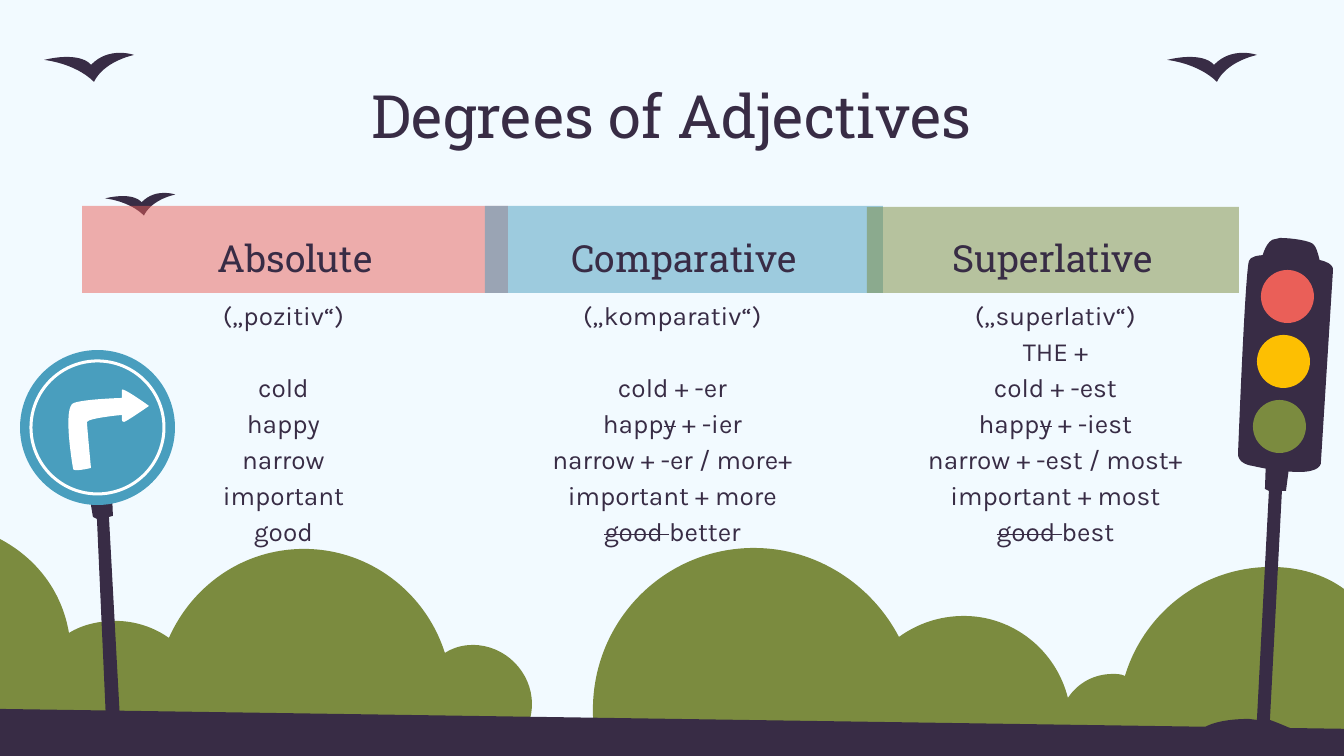
from lxml import etree
from pptx import Presentation
from pptx import util as u
from pptx.dml.color import RGBColor
from pptx.enum import shapes, text
from pptx.oxml.ns import qn

PX = 914400 / 134.4
SKY, DARK, GREEN, BLUE = "F2FAFF", "382C45", "7B8B3F", "499EBE"
RED, YELLOW, WHITE = "EA5F58", "FDBF02", "FFFFFF"

# Outlines: two numbers draw a line, six numbers draw a cubic curve.
BUSHES = [
    [(599, 756), (1344, 756), (1344, 589), (1325, 575, 1300, 567, 1271, 567),
     (1202, 567, 1144, 613, 1125, 676), (1121, 674, 1117, 674, 1113, 674),
     (1094, 674, 1078, 683, 1068, 698), (1056, 650, 1013, 616, 964, 616),
     (939, 616, 917, 624, 899, 637), (872, 585, 817, 548, 754, 548),
     (665, 548, 593, 620, 593, 710), (593, 726, 595, 741, 599, 756)],
    [(0, 539), (0, 756), (501, 756), (519, 746, 532, 727, 532, 704),
     (532, 672, 505, 645, 473, 645), (462, 645, 453, 648, 445, 653),
     (426, 593, 370, 549, 304, 549), (243, 549, 192, 586, 169, 638),
     (155, 628, 136, 621, 116, 621), (98, 621, 82, 625, 69, 633),
     (62, 591, 36, 558, 0, 539)],
]
GROUND = [[(0, 709), (1348, 729), (1348, 756), (0, 756)]]
BIRD = [[(0, 7), (0, 7, 31, 10, 50, 29), (50, 29, 57, 10, 90, 2),
         (90, 2, 65, -7, 47, 12), (47, 12, 38, -2, 0, 7)]]
SIGN_POLE = [[(89, 167), (100, 369), (86, 369), (77, 169), (73, 167), (69, 143),
              (86, 139, 92, 142, 92, 142), (93, 166)]]
TURN_ARROW = [[(53, 118), (53, 118, 42, 56, 54, 53), (65, 49, 102, 48, 102, 48),
               (102, 40), (101, 36, 128, 55, 129, 56), (129, 56, 106, 72, 104, 72),
               (101, 73, 102, 65, 102, 65), (102, 65, 69, 68, 67, 72),
               (67, 75, 71, 118, 71, 118), (71, 118, 51, 123, 53, 118)]]
LIGHT_CASE = [[(76, 17), (90, 17, 108, 20, 121, 21), (144, 23, 142, 32, 142, 32),
               (130, 223), (131, 231, 120, 234, 109, 234),
               (91, 234, 70, 230, 62, 228), (46, 226, 47, 216, 47, 216),
               (47, 216, 54, 35, 58, 23), (59, 19, 66, 17, 76, 17)]]
LIGHT_HOOD = [[(89, 0), (101, 0, 121, 3, 123, 7), (127, 11, 130, 29, 130, 29),
               (130, 29, 103, 20, 75, 20), (71, 20), (71, 20, 75, 1, 85, 1)]]
LIGHT_POST = [[(83, 220), (87, 220, 92, 222, 99, 223), (95, 253), (91, 253),
               (79, 482), (79, 482, 131, 501, 125, 509),
               (123, 511, 119, 512, 114, 512), (81, 512, 0, 494, 16, 488),
               (29, 482, 47, 481, 58, 481), (66, 482), (78, 253), (74, 251),
               (75, 222), (75, 222, 78, 220, 83, 220)]]

# Header, fill, header box, list box, list lines; ~ marks struck-out letters.
DEGREES = [
    ("Absolute", RED, (82, 206, 426, 87), (113, 281, 341, 180),
     ["(„pozitiv“)", "", "cold", "happy", "narrow", "important", "good"]),
    ("Comparative", BLUE, (485, 206, 398, 87), (502, 281, 341, 180),
     ["(„komparativ“)", "", "cold + -er", "happ~y~ + -ier",
      "narrow + -er / more+", "important + more", "~good ~better"]),
    ("Superlative", GREEN, (867, 207, 372, 86), (885, 281, 341, 305),
     ["(„superlativ“)", "THE +", "cold + -est", "happ~y~ + -iest",
      "narrow + -est / most+", "important + most", "~good ~best"]),
]


def px(*lengths):
    return [u.Emu(round(n * PX)) for n in lengths]


def color(hex_string):
    return RGBColor.from_string(hex_string)


def paint(shape, fill, alpha=None):
    shape.shadow.inherit = False
    shape.line.fill.background()
    shape.fill.solid()
    shape.fill.fore_color.rgb = color(fill)
    if alpha:
        tint = shape.fill._xPr.find(qn("a:solidFill"))[0]
        etree.SubElement(tint, qn("a:alpha")).set("val", str(alpha * 1000))


def bend(segment, points, origin):
    """Turn a line segment into a cubic curve through the given points."""
    curve = etree.Element(qn("a:cubicBezTo"))
    for x, y in points:
        point = etree.SubElement(curve, qn("a:pt"))
        point.set("x", str(x - origin[0]))
        point.set("y", str(y - origin[1]))
    segment.getparent().replace(segment, curve)


def outline(slide, contours, left, top, fill, scale=1):
    steps = [[[px(left + x * scale, top + y * scale)
               for x, y in zip(step[::2], step[1::2])] for step in contour]
             for contour in contours]
    builder = slide.shapes.build_freeform(*steps[0][0][0])
    for i, contour in enumerate(steps):
        if i:
            builder.move_to(*contour[0][0])
        builder.add_line_segments([step[-1] for step in contour[1:]], close=True)
    shape = builder.convert_to_shape()
    segments = list(shape._element.iter(qn("a:lnTo")))
    drawn = [step for contour in steps for step in contour[1:]]
    for segment, step in zip(segments, drawn):
        if len(step) == 3:
            bend(segment, step, (shape.left, shape.top))
    paint(shape, fill)


def disc(slide, left, top, size, fill):
    circle = slide.shapes.add_shape(shapes.MSO_SHAPE.OVAL, *px(left, top, size, size))
    paint(circle, fill)
    return circle


def format_text(shape, font, size, anchor):
    frame = shape.text_frame
    frame.word_wrap = True
    frame.auto_size = text.MSO_AUTO_SIZE.NONE
    frame.vertical_anchor = anchor
    frame.margin_left = frame.margin_right = u.Inches(0.1)
    frame.margin_top = frame.margin_bottom = u.Inches(0.1)
    for paragraph in frame.paragraphs:
        paragraph.alignment = text.PP_ALIGN.CENTER
        paragraph.line_spacing = 1.15
        for run in paragraph.runs:
            run.font.name, run.font.size = font, u.Pt(size)
            run.font.color.rgb = color(DARK)


def add_title(slide, box, words):
    title = slide.shapes.title
    title.left, title.top, title.width, title.height = px(*box)
    title.text_frame.text = words
    format_text(title, "Roboto Slab", 32, text.MSO_ANCHOR.BOTTOM)


def add_header(slide, box, words, fill):
    header = slide.shapes.add_shape(shapes.MSO_SHAPE.RECTANGLE, *px(*box))
    paint(header, fill, alpha=50)
    header.text_frame.text = words
    format_text(header, "Roboto Slab", 20, text.MSO_ANCHOR.BOTTOM)


def add_examples(slide, box, lines):
    examples = slide.shapes.add_textbox(*px(*box))
    frame = examples.text_frame
    paragraph = None
    for line in lines:
        if not line:  # an empty line becomes space below the one before
            paragraph.space_after = u.Pt(19.3)
            continue
        paragraph = frame.add_paragraph() if paragraph is not None else frame.paragraphs[0]
        for i, part in enumerate(line.split("~")):
            if part:
                run = paragraph.add_run()
                run.text = part
                if i % 2:
                    run._r.get_or_add_rPr().set("strike", "sngStrike")
    format_text(examples, "Karla", 14, text.MSO_ANCHOR.TOP)


def add_landscape(slide, left, top):
    outline(slide, BUSHES, left, top, GREEN)
    outline(slide, GROUND, left, top, DARK)
    for x, y, scale in ((105, 193, 0.78), (44, 53, 1), (1167, 53, 1)):
        outline(slide, BIRD, left + x, top + y, DARK, scale)


def add_turn_sign(slide, left, top):
    outline(slide, SIGN_POLE, left, top, DARK)
    disc(slide, left, top, 155, BLUE)
    outline(slide, TURN_ARROW, left, top, WHITE)
    ring = disc(slide, left + 11, top + 11, 133, WHITE)
    ring.fill.background()
    ring.line.color.rgb = color(WHITE)
    ring.line.width = px(3)[0]


def add_traffic_light(slide, left, top):
    outline(slide, LIGHT_CASE, left, top, DARK)
    for i, lamp in enumerate((RED, YELLOW, GREEN)):
        disc(slide, left + 70 - 4 * i, top + 32 + 65 * i, 53, lamp)
    outline(slide, LIGHT_HOOD, left, top, DARK)
    outline(slide, LIGHT_POST, left, top, DARK)


def main():
    deck = Presentation()
    deck.slide_width, deck.slide_height = px(1344, 756)
    slide = deck.slides.add_slide(deck.slide_layouts[5])
    slide.background.fill.solid()
    slide.background.fill.fore_color.rgb = color(SKY)

    add_landscape(slide, 0, 0)
    add_title(slide, (105, 79, 1134, 85), "Degrees of Adjectives")
    for name, fill, header_box, list_box, lines in DEGREES:
        add_header(slide, header_box, name, fill)
        add_examples(slide, list_box, lines)
    add_turn_sign(slide, 20, 350)
    add_traffic_light(slide, 1191, 238)
    deck.save("out.pptx")


if __name__ == "__main__":
    main()
